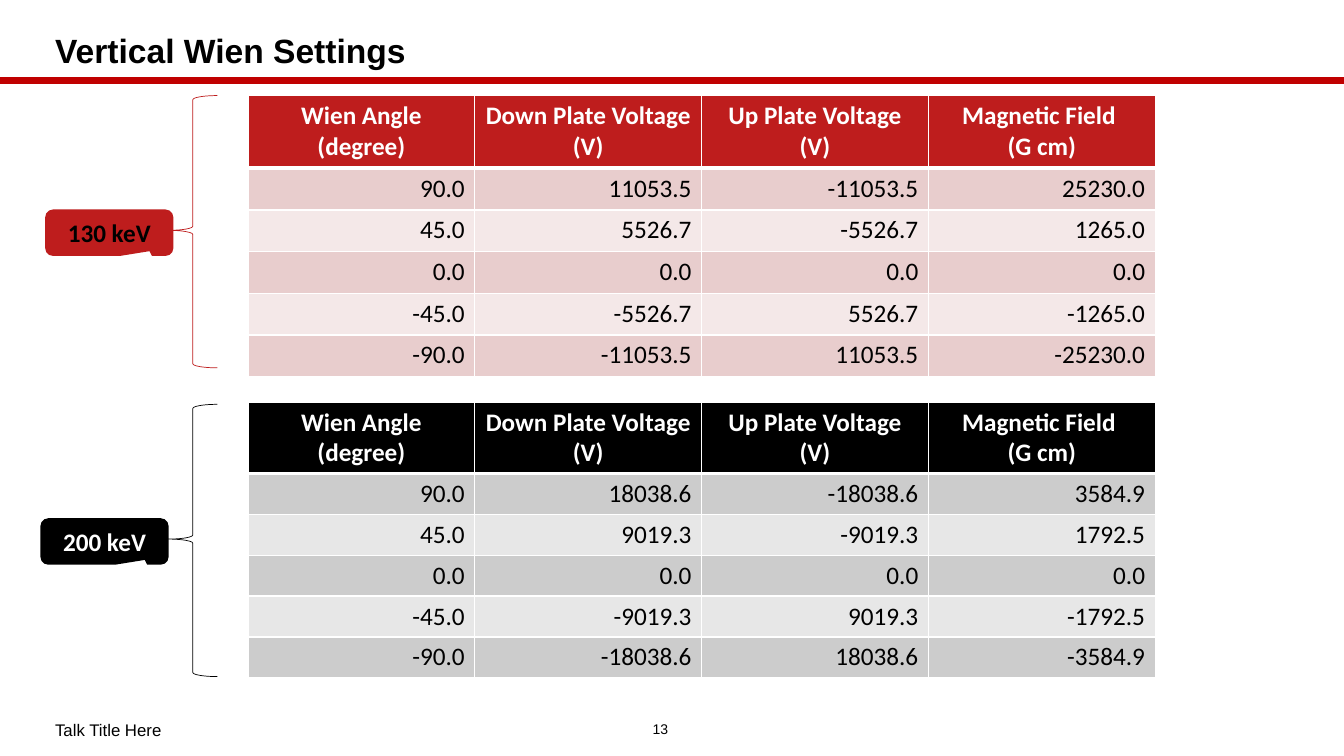
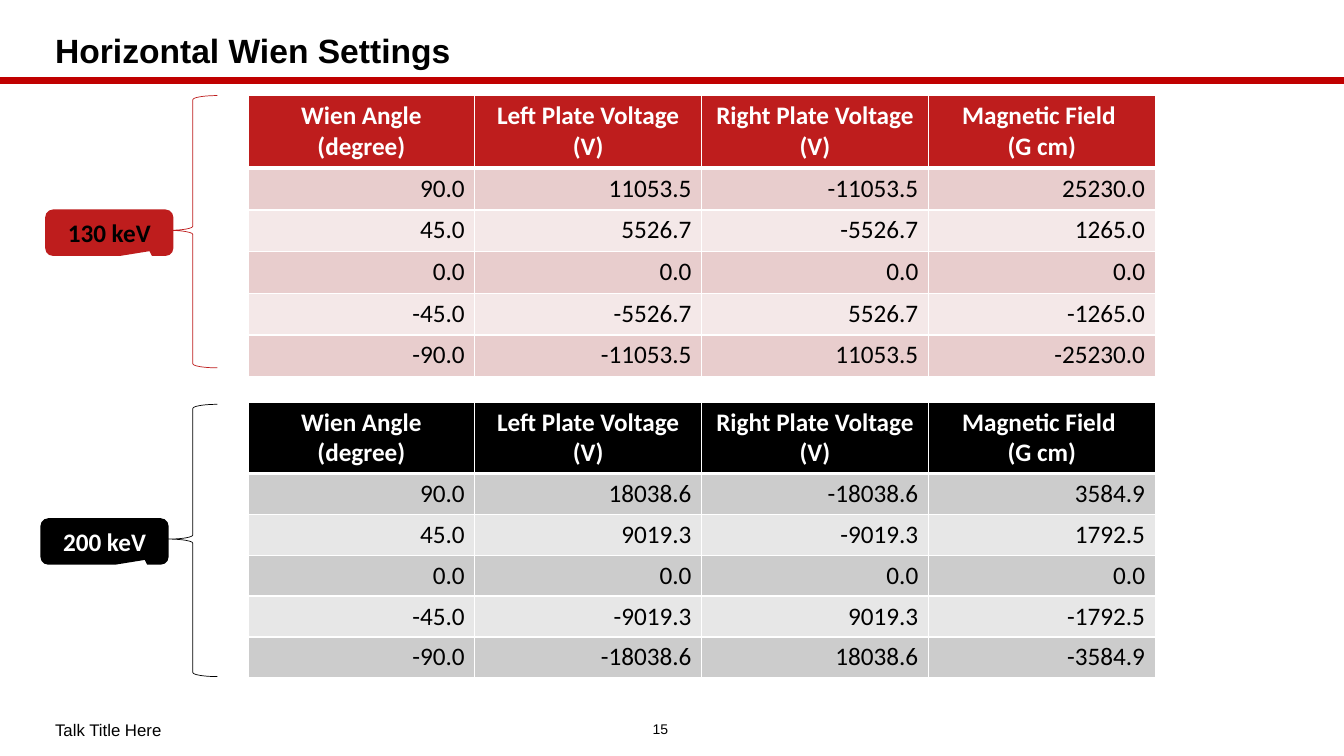
from lxml import etree
from pptx import Presentation
from pptx.dml.color import RGBColor
from pptx.enum.shapes import MSO_CONNECTOR, MSO_SHAPE
from pptx.enum.text import MSO_ANCHOR, PP_ALIGN
from pptx.oxml.ns import qn
from pptx.util import Cm, Pt

BLACK = RGBColor(0x00, 0x00, 0x00)
WHITE = RGBColor(0xFF, 0xFF, 0xFF)
RULE_RED = RGBColor(0xC0, 0x00, 0x00)
RED = RGBColor(0xBE, 0x1D, 0x1D)
RED_BANDS = RGBColor(0xE8, 0xCD, 0xCD), RGBColor(0xF4, 0xE8, 0xE8)
GREY_BANDS = RGBColor(0xCC, 0xCC, 0xCC), RGBColor(0xE7, 0xE7, 0xE7)

TITLE = dict(name="Arial", size=Pt(24), bold=True)
FOOTER = dict(name="Arial", size=Pt(12))
NUMBER = dict(name="Arial", size=Pt(10))
STRONG = dict(name="Calibri", size=Pt(18), bold=True)
VALUE = dict(name="Calibri", size=Pt(18), bold=False)

MARGIN = 1.14
FOOTER_TOP = 17.96
TABLE_LEFT, TABLE_WIDTH = 6.25, 22.86
BRACE_LEFT, BRACE_WIDTH, BRACE_HEIGHT = 4.24, 1.24, 6.86
LABEL_OFFSET = 2.87

ENERGIES = [
    dict(label="130 keV", color=RED, label_color=BLACK, bands=RED_BANDS,
         table_top=2.41, brace_top=2.41, label_left=MARGIN,
         header_height=1.83, row_height=1.05,
         readings=[(90, 11053.5, 25230.0), (45, 5526.7, 1265.0)]),
    dict(label="200 keV", color=BLACK, label_color=WHITE, bands=GREY_BANDS,
         table_top=10.13, brace_top=10.19, label_left=1.02,
         header_height=1.8, row_height=1.03,
         readings=[(90, 18038.6, 3584.9), (45, 9019.3, 1792.5)]),
]

SLIDES = [
    ("Vertical Wien Settings", 13, ("Down", "Up")),
    ("Horizontal Wien Settings", 15, ("Left", "Right")),
]


def value_rows(readings):
    mirrored = [tuple(-x for x in reading) for reading in reversed(readings)]
    return [[f"{x:.1f}" for x in (angle, volts, -volts + 0.0, field)]
            for angle, volts, field in [*readings, (0, 0.0, 0.0), *mirrored]]


class Deck:
    def __init__(self):
        self.prs = Presentation()
        self.prs.slide_width, self.prs.slide_height = Cm(33.87), Cm(19.05)
        self.s = None

    def new_slide(self, title, number):
        self.s = self.prs.slides.add_slide(self.prs.slide_layouts[6])
        self.rule(2.03)
        self.text(title, MARGIN, 0.66, 31.34, 1.35, TITLE, spacing=0.9)
        self.text("Talk Title Here", MARGIN, FOOTER_TOP, 14.5, 0.86, FOOTER)
        self.text(str(number), 15.65, FOOTER_TOP, 1.98, 0.84, NUMBER,
                  align=PP_ALIGN.CENTER)

    def fill_text(self, tf, text, style, color, align, spacing=None):
        tf.text = text
        tf.word_wrap = True
        for p in tf.paragraphs:
            p.alignment = align
            p.line_spacing = spacing
            for r in p.runs:
                for key, value in style.items():
                    setattr(r.font, key, value)
                r.font.color.rgb = color

    def text(self, text, left, top, width, height, style,
             align=PP_ALIGN.LEFT, spacing=None):
        tf = self.s.shapes.add_textbox(
            Cm(left), Cm(top), Cm(width), Cm(height)).text_frame
        tf.vertical_anchor = MSO_ANCHOR.MIDDLE
        self.fill_text(tf, text, style, BLACK, align, spacing)

    def rule(self, y):
        line = self.s.shapes.add_connector(
            MSO_CONNECTOR.STRAIGHT, 0, Cm(y), self.prs.slide_width, Cm(y))
        line.line.color.rgb = RULE_RED
        line.line.width = Pt(4.5)
        etree.SubElement(line._element.spPr, qn("a:effectLst"))

    def shape(self, kind, left, top, width, height, adjustments):
        sp = self.s.shapes.add_shape(
            kind, Cm(left), Cm(top), Cm(width), Cm(height))
        sp.shadow.inherit = False
        for i, value in enumerate(adjustments):
            sp.adjustments[i] = value
        return sp

    def brace(self, top, color):
        sp = self.shape(MSO_SHAPE.LEFT_BRACE, BRACE_LEFT, top,
                        BRACE_WIDTH, BRACE_HEIGHT, (0.083, 0.495))
        sp.fill.background()
        sp.line.color.rgb = color
        sp.line.width = Pt(0.5)

    def callout(self, text, left, top, fill, color):
        sp = self.shape(MSO_SHAPE.ROUNDED_RECTANGULAR_CALLOUT, left, top,
                        3.23, 1.17, (0.314, 0.398, 0.167))
        sp.fill.solid()
        sp.fill.fore_color.rgb = fill
        sp.line.fill.background()
        sp.text_frame.vertical_anchor = MSO_ANCHOR.MIDDLE
        self.fill_text(sp.text_frame, text, STRONG, color, PP_ALIGN.CENTER)

    def borders(self, cell, top, bottom):
        tcPr = cell._tc.get_or_add_tcPr()
        for side, width in dict(L=1, R=1, T=top, B=bottom).items():
            ln = etree.SubElement(tcPr, qn(f"a:ln{side}"), w=str(Pt(width)))
            fill = etree.SubElement(ln, qn("a:solidFill"))
            etree.SubElement(fill, qn("a:srgbClr"), val=str(WHITE))

    def table(self, headers, rows, top, header_height, row_height, color, bands):
        heights = [header_height] + [row_height] * len(rows)
        table = self.s.shapes.add_table(
            len(heights), len(headers), Cm(TABLE_LEFT), Cm(top),
            Cm(TABLE_WIDTH), Cm(sum(heights))).table
        table.horz_banding = False
        for i, (height, texts) in enumerate(zip(heights, [headers, *rows])):
            table.rows[i].height = Cm(height)
            if i == 0:
                fill, look = color, (STRONG, WHITE, PP_ALIGN.CENTER)
            else:
                fill, look = bands[(i - 1) % 2], (VALUE, BLACK, PP_ALIGN.RIGHT)
            for j, text in enumerate(texts):
                cell = table.cell(i, j)
                self.borders(cell, 3 if i == 1 else 1, 3 if i == 0 else 1)
                cell.fill.solid()
                cell.fill.fore_color.rgb = fill
                self.fill_text(cell.text_frame, text, *look)

    def energy_block(self, headers, energy):
        self.brace(energy["brace_top"], energy["color"])
        self.callout(energy["label"], energy["label_left"],
                     energy["brace_top"] + LABEL_OFFSET,
                     energy["color"], energy["label_color"])
        self.table(headers, value_rows(energy["readings"]),
                   energy["table_top"], energy["header_height"],
                   energy["row_height"], energy["color"], energy["bands"])


def main():
    deck = Deck()
    for title, number, plates in SLIDES:
        deck.new_slide(title, number)
        headers = ["Wien Angle (degree)",
                   *(f"{plate} Plate Voltage (V)" for plate in plates),
                   "Magnetic Field \n(G cm)"]
        for energy in ENERGIES:
            deck.energy_block(headers, energy)
    deck.prs.save("out.pptx")


if __name__ == "__main__":
    main()
